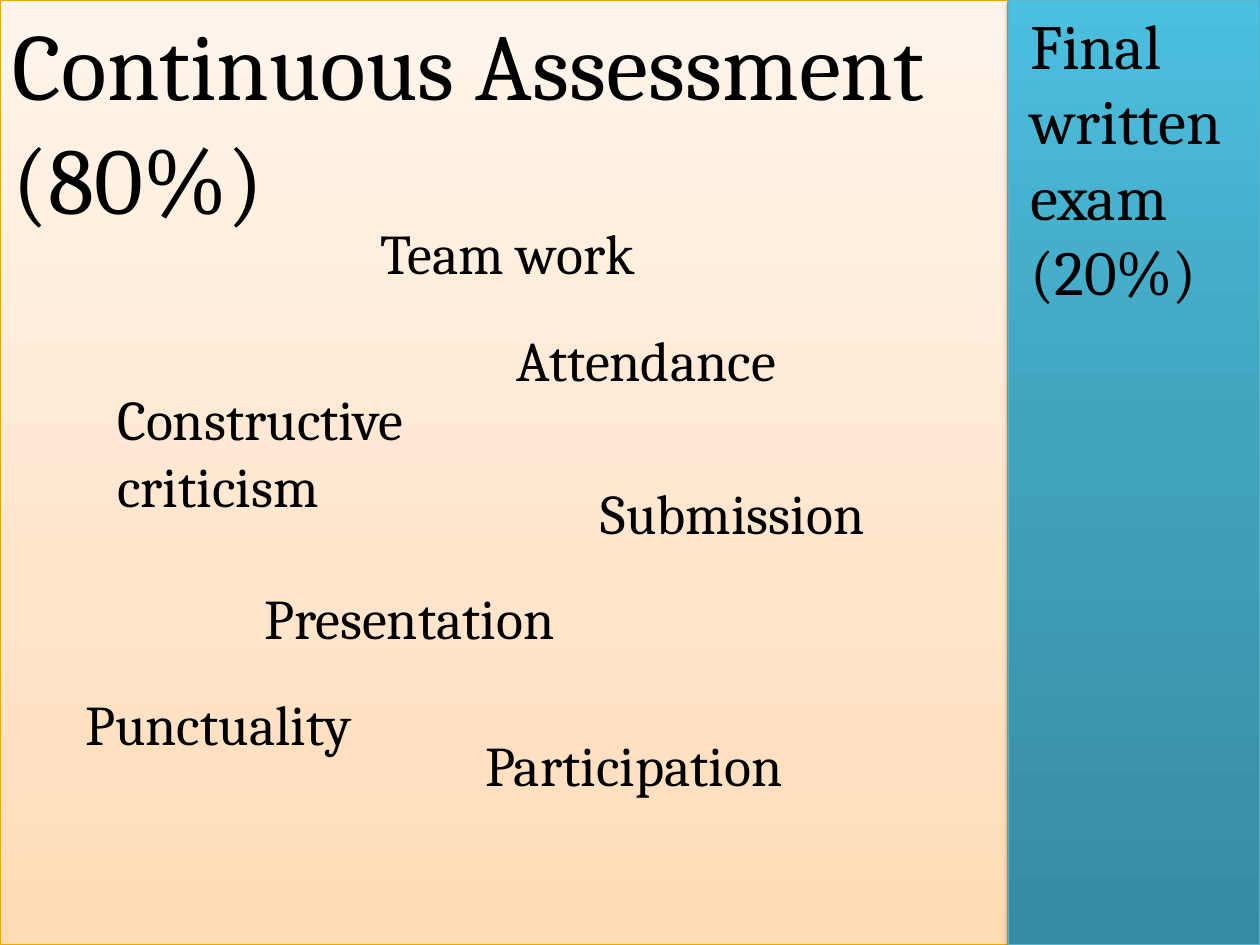
from dataclasses import dataclass

from pptx import Presentation
from pptx import oxml
from pptx import util as u
from pptx.dml.color import RGBColor
from pptx.enum import shapes, text
from pptx.oxml import ns

FONT = "Cambria"
WIDE, HIGH, SPLIT = 25.4, 19.05, 20.32


@dataclass
class Panel:
    left: float
    width: float
    stops: list[tuple[int, str]]
    edge: str
    blur: float


@dataclass
class Label:
    words: str
    left: float
    top: float
    width: float
    height: float = 1.63
    size: int = 32


PANELS = [
    Panel(0, SPLIT, [(0, "FFDBB5"), (35, "FFE5CB"), (100, "FFF5EB")], "EBA900", 3.5),
    Panel(SPLIT, WIDE - SPLIT, [(0, "378BA2"), (55, "41A4BF"), (100, "4BBFDE")], "5BB3CA", 3.1),
]
TITLE = Label("Continuous Assessment (80%)", 0, 0, SPLIT, 4.88, 54)
LABELS = [
    Label("Final written exam (20%)", 20.52, 0, 4.65, 6.4, 36),
    Label("Team work", 7.42, 4.29, 7.62),
    Label("Attendance", 10.16, 6.43, 8.26),
    Label("Presentation", 5.08, 11.63, 7.19),
    Label("Participation", 9.53, 14.61, 8.46),
    Label("Submission", 11.86, 9.53, 6.78, 3),
    Label("Punctuality", 1.47, 13.77, 7.19),
    Label("Constructive criticism", 2.11, 7.62, 7.19, 3),
]


def color(code: str) -> RGBColor:
    return RGBColor.from_string(code)


def draw_panel(slide, panel: Panel) -> None:
    box = slide.shapes.add_shape(
        shapes.MSO_SHAPE.RECTANGLE, u.Cm(panel.left), 0, u.Cm(panel.width), u.Cm(HIGH)
    )
    box.line.color.rgb = color(panel.edge)
    box.line.width = u.Pt(0.5)
    box.shadow.inherit = False
    stops = "".join(
        f'<a:gs pos="{pos * 1000}"><a:srgbClr val="{code}"/></a:gs>'
        for pos, code in panel.stops
    )
    fill = oxml.parse_xml(
        f'<a:gradFill {ns.nsdecls("a")} rotWithShape="1"><a:gsLst>{stops}</a:gsLst>'
        '<a:lin ang="16200000" scaled="0"/></a:gradFill>'
    )
    shade = oxml.parse_xml(
        f'<a:outerShdw {ns.nsdecls("a")} blurRad="{u.Pt(panel.blur)}" dist="{u.Pt(2)}" '
        'dir="5400000" rotWithShape="0"><a:srgbClr val="000000">'
        '<a:alpha val="38000"/></a:srgbClr></a:outerShdw>'
    )
    props = box.element.spPr
    props.find(ns.qn("a:prstGeom")).addnext(fill)
    props.find(ns.qn("a:effectLst")).append(shade)


def set_text(box, label: Label) -> None:
    box.left, box.top = u.Cm(label.left), u.Cm(label.top)
    box.width, box.height = u.Cm(label.width), u.Cm(label.height)
    frame = box.text_frame
    frame.text = label.words
    frame.word_wrap = True
    frame.auto_size = text.MSO_AUTO_SIZE.SHAPE_TO_FIT_TEXT
    frame.vertical_anchor = text.MSO_ANCHOR.TOP
    para = frame.paragraphs[0]
    para.alignment = text.PP_ALIGN.LEFT
    para.font.name = FONT
    para.font.size = u.Pt(label.size)
    para.font.color.rgb = color("000000")


def main() -> None:
    deck = Presentation()
    deck.slide_width, deck.slide_height = u.Cm(WIDE), u.Cm(HIGH)
    slide = deck.slides.add_slide(deck.slide_layouts[5])
    for panel in PANELS:
        draw_panel(slide, panel)
    title = slide.shapes.title
    title.element.getparent().append(title.element)
    set_text(title, TITLE)
    for label in LABELS:
        set_text(slide.shapes.add_textbox(0, 0, 0, 0), label)
    deck.save("out.pptx")


if __name__ == "__main__":
    main()
